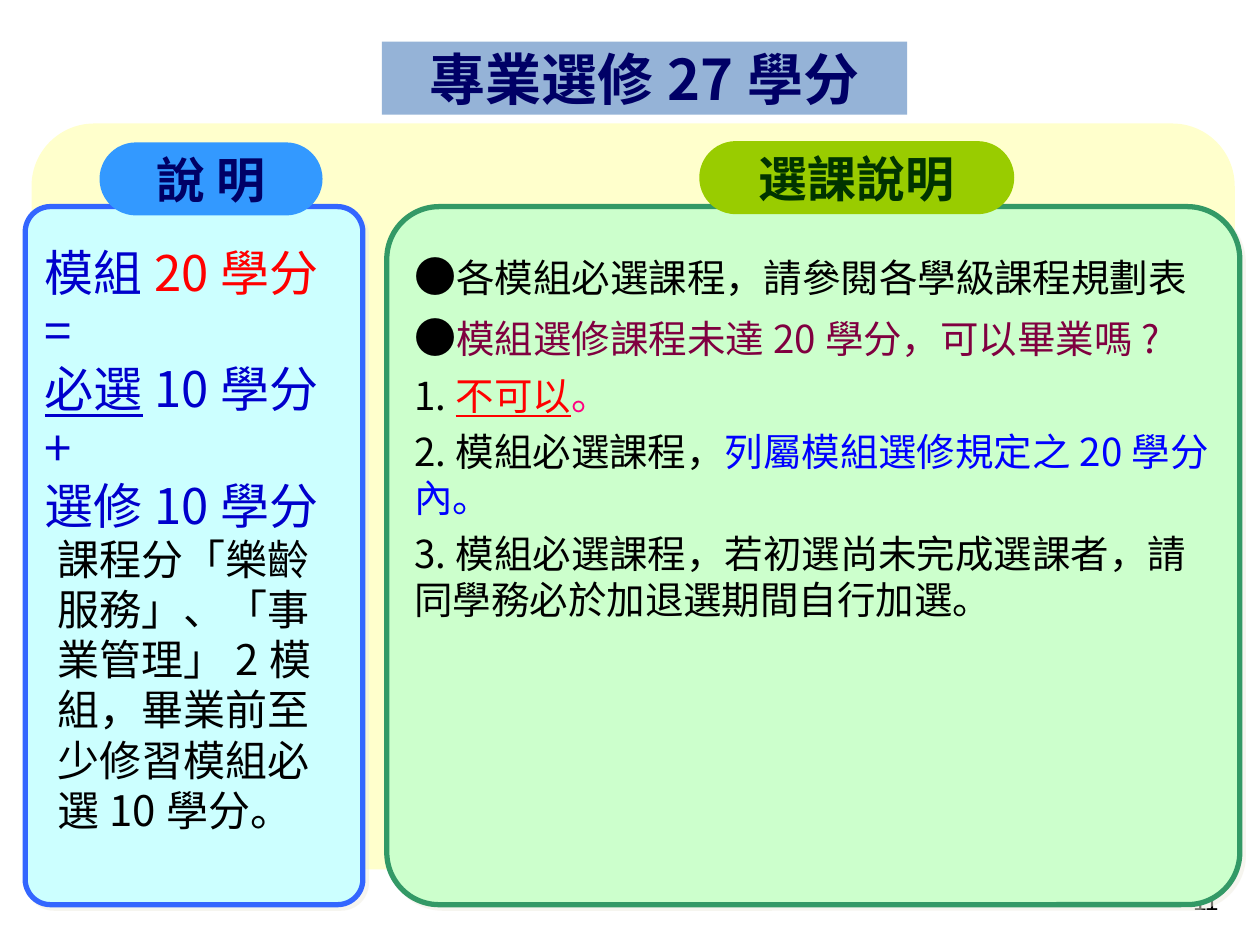
import pptx
import pptx.util
import pptx.dml.color
import pptx.enum.shapes
import pptx.enum.text
import pptx.oxml.ns
from lxml import etree

Inches, Pt = pptx.util.Inches, pptx.util.Pt
ALIGN = pptx.enum.text.PP_ALIGN
ROUND = pptx.enum.shapes.MSO_SHAPE.ROUNDED_RECTANGLE
qn = pptx.oxml.ns.qn

THEME = {
    "body": "Noto Sans CJK JP", "head": "Noto Sans CJK SC", "num": "Arial",
    "title": 32, "label": 28, "big": 28, "text": 24, "note": 22, "page": 14,
    "pitch": 1.19, "gap": 6, "edge": 3,
    "back": "FFFFCC", "shade": "EEECE1", "black": "000000", "navy": "000066",
    "blue": "0000CC", "bright": "0000FF", "red": "FF0000",
    "wine": "800040", "pink": "FF0080",
}

# A run is (text, colour, size, underlined).
TITLE = ("專業選修27學分", (3.03, 0.33, 4.17, 0.58), "95B3D7", "navy")
BACK = (0.25, 0.98, 9.55, 5.92)
PAGE = ("11", (7.44, 6.98, 2.33, 0.52))
PANELS = [
    {
        "box": (0.2, 1.64, 2.68, 5.54), "fill": "CCFFFF", "line": "3366FF",
        "label": ("說 明", (0.79, 1.13, 1.77, 0.58), "3399FF", "000066"),
        "gap": 0,
        "paras": [
            [("模組", "blue", "big", False), ("20學分", "red", "big", False),
             ("=", "blue", "big", False)],
            [("必選", "blue", "big", True), ("10學分+", "blue", "big", False)],
            [("選修10學分", "blue", "big", False)],
            [("課程分「樂齡服務」、「事業管理」2模組，畢業前至少修習模組必選10學分。",
              "black", "text", False)],
        ],
        "indents": {3: 0.1},
    },
    {
        "box": (3.07, 1.64, 6.77, 5.54), "fill": "CCFFCC", "line": "339966",
        "label": ("選課說明", (5.55, 1.12, 2.5, 0.58), "99CC00", "003300"),
        "gap": THEME["gap"],
        "paras": [
            [("●", "black", "text", False),
             ("各模組必選課程，請參閱各學級課程規劃表", "black", "note", False)],
            [("●", "black", "text", False),
             ("模組選修課程未達20學分，可以畢業嗎?", "wine", "note", False)],
            [("1.", "black", "note", False), ("不可以", "red", "note", True),
             ("。", "pink", "note", False)],
            [("2.模組必選課程，", "black", "note", False),
             ("列屬模組選修規定之20學分內。", "bright", "note", False)],
            [("3.模組必選課程，若初選尚未完成選課者，請同學務必於加退選期間自行加選。",
              "black", "note", False)],
        ],
        "indents": {},
    },
]


def color(name):
    return pptx.dml.color.RGBColor.from_string(THEME.get(name, name))


def style(run, size, tint, face, bold=False, under=False):
    font = run.font
    font.size, font.name, font.bold = Pt(THEME[size]), THEME[face], bold
    font.underline = under
    font.color.rgb = color(tint)
    east = etree.Element(qn("a:ea"), typeface=THEME[face])
    run._r.rPr.find(qn("a:latin")).addnext(east)


def place(shape, box):
    shape.left, shape.top, shape.width, shape.height = map(Inches, box)


def paint(shape, fill):
    shape.fill.solid()
    shape.fill.fore_color.rgb = color(fill)


def block(slide, box, fill, curve):
    shape = slide.shapes.add_shape(ROUND, *map(Inches, box))
    shape.adjustments[0] = curve
    shape.shadow.inherit = False
    paint(shape, fill)
    shape.line.fill.background()
    return shape


def shade(shape):
    """Give the shape a soft offset shadow."""
    effects = shape._element.spPr.find(qn("a:effectLst"))
    outer = etree.SubElement(effects, qn("a:outerShdw"), blurRad="0",
                             dist=str(Pt(2.8)), dir="2700000", algn="ctr",
                             rotWithShape="0")
    tint = etree.SubElement(outer, qn("a:srgbClr"), val=THEME["shade"])
    etree.SubElement(tint, qn("a:alpha"), val="50000")


def caption(shape, text, size, tint):
    frame = shape.text_frame
    frame.text = text
    frame.word_wrap = False
    frame.auto_size = pptx.enum.text.MSO_AUTO_SIZE.NONE
    frame.vertical_anchor = pptx.enum.text.MSO_ANCHOR.MIDDLE
    para = frame.paragraphs[0]
    para.alignment = ALIGN.CENTER
    style(para.runs[0], size, tint, "head", bold=True)


def head(slide):
    text, box, fill, tint = TITLE
    shape = slide.shapes.title
    place(shape, box)
    form = etree.SubElement(shape._element.spPr, qn("a:prstGeom"),
                            prst="roundRect")
    guides = etree.SubElement(form, qn("a:avLst"))
    etree.SubElement(guides, qn("a:gd"), name="adj", fmla="val 50000")
    paint(shape, fill)
    caption(shape, text, "title", tint)


def panel(slide, data):
    shape = block(slide, data["box"], data["fill"], 0.075)
    shape.line.color.rgb = color(data["line"])
    shape.line.width = Pt(THEME["edge"])
    shade(shape)
    frame = shape.text_frame
    frame.word_wrap = True
    frame.vertical_anchor = pptx.enum.text.MSO_ANCHOR.TOP
    frame.margin_top = Inches(0.23)
    for i, runs in enumerate(data["paras"]):
        para = frame.add_paragraph() if i else frame.paragraphs[0]
        para.alignment = ALIGN.LEFT
        if i in data["indents"]:
            para._p.get_or_add_pPr().set("marL", str(Inches(data["indents"][i])))
        tall = max(THEME[size] for _, _, size, _ in runs)
        para.line_spacing = Pt(round(tall * THEME["pitch"], 1))
        para.space_before = Pt(data["gap"] if i else 0)
        for text, tint, size, under in runs:
            run = para.add_run()
            run.text = text
            style(run, size, tint, "body", under=under)
    text, box, fill, tint = data["label"]
    caption(block(slide, box, fill, 0.5), text, "label", tint)


def number(slide):
    text, box = PAGE
    frame = slide.shapes.add_textbox(*map(Inches, box)).text_frame
    frame.word_wrap = True
    frame.text = text
    para = frame.paragraphs[0]
    para.alignment = ALIGN.RIGHT
    style(para.runs[0], "page", "black", "num")


def main():
    deck = pptx.Presentation()
    deck.slide_width, deck.slide_height = Inches(10), Inches(7.5)
    slide = deck.slides.add_slide(deck.slide_layouts[5])
    head(slide)
    block(slide, BACK, "back", 0.084)
    number(slide)
    for data in PANELS:
        panel(slide, data)
    deck.save("out.pptx")


if __name__ == "__main__":
    main()
